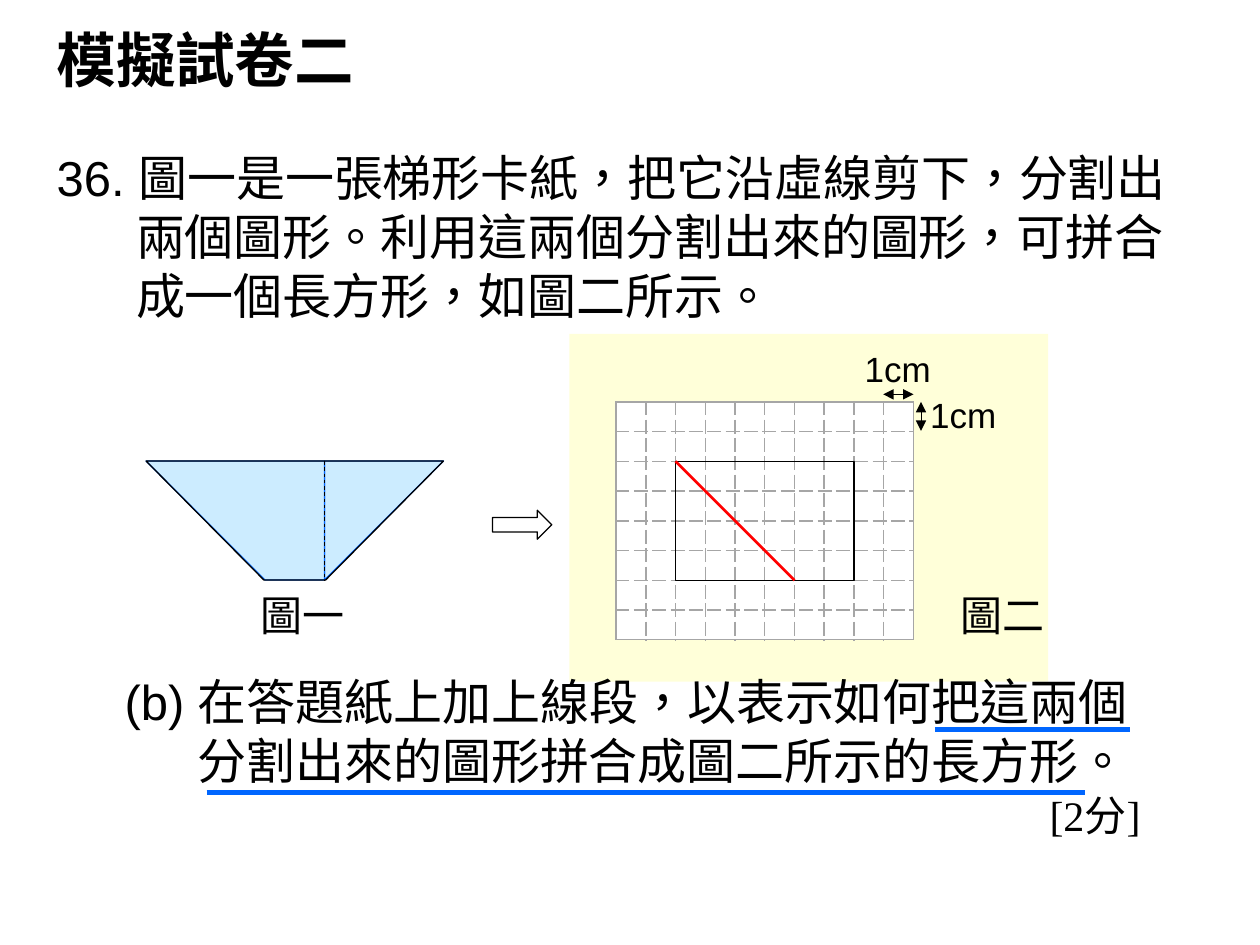
"""Builds an exam-question slide on cutting a trapezium and forming a rectangle."""
from lxml import etree
from pptx import Presentation
from pptx.dml.color import RGBColor
from pptx.enum import lang, shapes, text
from pptx.oxml.ns import qn
from pptx.util import Inches, Pt

THEME = dict(
    ink="000000", paper="FFFFFF", panel="FFFFD9", grid="A6A6A6",
    card="CCECFF", blue="0066FF", red="FF0000",
    sans="Arial", serif="Times New Roman",
    title=34, body=28, label=24, unit=20, cell=8,
)
LEFT, CENTER, RIGHT = text.PP_ALIGN.LEFT, text.PP_ALIGN.CENTER, text.PP_ALIGN.RIGHT
COLS, ROWS = 10, 8
UNIT = 2.36 / COLS
GRID = (4.89, 3.19)
CARD = (1.16, 3.66)

TITLE = "模擬試卷二"
QUESTION = "36. 圖一是一張梯形卡紙，把它沿虛線剪下，分割出兩個圖形。利用這兩個分割出來的圖形，可拼合\v成一個長方形，如圖二所示。"
PART_B = [
    dict(words="(b) 在答題紙上加上線段，以表示如何把這兩個", margin=0.67, indent=-0.56),
    dict(words="分割出來的圖形拼合成圖二所示的長方形。", margin=0.67, indent=0.02),
    dict(words="[2分]", size="label", face="serif", align=RIGHT),
]
LABELS = [
    ("圖一", "label", (1.96, 4.63, 0.88, 0.51)),
    ("圖二", "label", (7.52, 4.63, 0.88, 0.51)),
    ("1cm", "unit", (6.76, 2.71, 0.73, 0.44)),
    ("1cm", "unit", (7.28, 3.07, 0.73, 0.44)),
]
CARD_PIECES = [
    [(10, 0), (6, 0), (6, 4)],
    [(0, 0), (6, 0), (6, 4), (4, 4)],
]


def color(name):
    return RGBColor.from_string(THEME[name])


def box(at):
    return [Inches(v) for v in at]


def at_unit(origin, col, row):
    return origin[0] + col * UNIT, origin[1] + row * UNIT


def write(sp, paragraphs, wrap=True):
    tf = sp.text_frame
    for key, value in dict(word_wrap=wrap, auto_size=text.MSO_AUTO_SIZE.NONE,
                           vertical_anchor=text.MSO_ANCHOR.TOP).items():
        setattr(tf, key, value)
    for i, item in enumerate(paragraphs):
        p = tf.paragraphs[0] if i == 0 else tf.add_paragraph()
        pPr = p._p.get_or_add_pPr()
        pPr.set("marL", str(Inches(item.get("margin", 0))))
        pPr.set("indent", str(Inches(item.get("indent", 0))))
        etree.SubElement(pPr, qn("a:buNone"))
        p.text = item["words"]
        for key, value in dict(alignment=item.get("align", LEFT), line_spacing=1.0,
                               space_before=Pt(0), space_after=Pt(0)).items():
            setattr(p, key, value)
        for r in p.runs:
            r.font.color.rgb = color("ink")
            for key, value in dict(size=Pt(THEME[item.get("size", "body")]),
                                   name=THEME[item.get("face", "sans")],
                                   bold=item.get("bold", False),
                                   language_id=lang.MSO_LANGUAGE_ID.CHINESE_HONG_KONG_SAR).items():
                setattr(r.font, key, value)


def paint(sp, fill=None, line=None, width=0.75):
    sp.shadow.inherit = False
    if fill:
        sp.fill.solid()
        sp.fill.fore_color.rgb = color(fill)
    else:
        sp.fill.background()
    if line:
        sp.line.color.rgb = color(line)
        sp.line.width = Pt(width)
    else:
        sp.line.fill.background()
    return sp


def add_shape(s, kind, at, **look):
    return paint(s.shapes.add_shape(kind, *box(at)), **look)


def add_line(s, start, end, line, width, dash=False, arrows=False):
    cx = s.shapes.add_connector(shapes.MSO_CONNECTOR.STRAIGHT, *box(start + end))
    cx.line.color.rgb = color(line)
    cx.line.width = Pt(width)
    ln = cx.line._get_or_add_ln()
    if dash:
        etree.SubElement(ln, qn("a:prstDash"), val="dash")
    if arrows:
        for tag in ("a:headEnd", "a:tailEnd"):
            etree.SubElement(ln, qn(tag), type="triangle")
    etree.SubElement(cx._element.spPr, qn("a:effectLst"))


def add_grid(s):
    table = s.shapes.add_table(ROWS, COLS, *box(GRID + (COLS * UNIT, ROWS * UNIT))).table
    for line in table.columns:
        line.width = Inches(UNIT)
    for line in table.rows:
        line.height = Inches(UNIT)
    for row in range(ROWS):
        for col in range(COLS):
            cell = table.cell(row, col)
            for side in ("left", "right", "top", "bottom"):
                setattr(cell, "margin_" + side, 0)
            etree.SubElement(cell.text_frame.paragraphs[0]._p, qn("a:endParaRPr"),
                             sz=str(THEME["cell"] * 100))
            tcPr = cell._tc.get_or_add_tcPr()
            outer = dict(L=col == 0, R=col == COLS - 1, T=row == 0, B=row == ROWS - 1)
            for side, solid in outer.items():
                ln = etree.SubElement(tcPr, qn("a:ln" + side), w=str(Pt(1)))
                fill = etree.SubElement(ln, qn("a:solidFill"))
                etree.SubElement(fill, qn("a:srgbClr"), val=THEME["grid"])
                etree.SubElement(ln, qn("a:prstDash"), val="solid" if solid else "dash")
            cell.fill.solid()
            cell.fill.fore_color.rgb = color("paper")


def add_card(s):
    for piece in CARD_PIECES:
        points = [box(at_unit(CARD, *point)) for point in piece]
        builder = s.shapes.build_freeform(*points[0])
        builder.add_line_segments(points[1:], close=True)
        paint(builder.convert_to_shape(), fill="card", line="blue")
    outline = add_shape(s, shapes.MSO_SHAPE.TRAPEZOID, CARD + (10 * UNIT, 4 * UNIT), line="ink")
    outline.adjustments[0] = 0.99
    outline._element.spPr.xfrm.set("flipV", "1")
    add_line(s, at_unit(CARD, 6, 0), at_unit(CARD, 6, 4), "ink", 0.5, dash=True)


def main():
    prs = Presentation()
    prs.slide_width, prs.slide_height = Inches(10), Inches(7.5)
    s = prs.slides.add_slide(prs.slide_layouts[1])
    title, question = s.placeholders
    for sp, at in ((title, (0.35, 0.13, 4.06, 0.67)), (question, (0.35, 1.12, 9.33, 1.51))):
        sp.left, sp.top, sp.width, sp.height = box(at)
    write(title, [dict(words=TITLE, size="title", bold=True)])
    write(question, [dict(words=QUESTION, margin=0.63, indent=-0.63)])

    add_shape(s, shapes.MSO_SHAPE.RECTANGLE, (4.52, 2.65, 3.8, 2.76), fill="panel")
    write(s.shapes.add_textbox(*box((0.78, 5.28, 8.37, 1.45))), PART_B)
    add_shape(s, shapes.MSO_SHAPE.RIGHT_ARROW, (3.91, 4.05, 0.47, 0.23), line="ink")
    add_grid(s)
    corner = at_unit(GRID, 2, 2)
    add_shape(s, shapes.MSO_SHAPE.RECTANGLE, corner + (6 * UNIT, 4 * UNIT), line="ink")
    add_card(s)
    add_line(s, corner, at_unit(GRID, 6, 6), "red", 1.5)
    for start, end in (((7.42, 5.79), (8.97, 5.79)), ((1.64, 6.29), (8.61, 6.29))):
        add_line(s, start, end, "blue", 3)
    for start, end in (((7.01, 3.13), (7.25, 3.13)), ((7.31, 3.42), (7.31, 3.19))):
        add_line(s, start, end, "ink", 0.5, arrows=True)
    for words, size, at in LABELS:
        write(s.shapes.add_textbox(*box(at)), [dict(words=words, size=size, align=CENTER)], wrap=False)
    prs.save("out.pptx")


if __name__ == "__main__":
    main()
